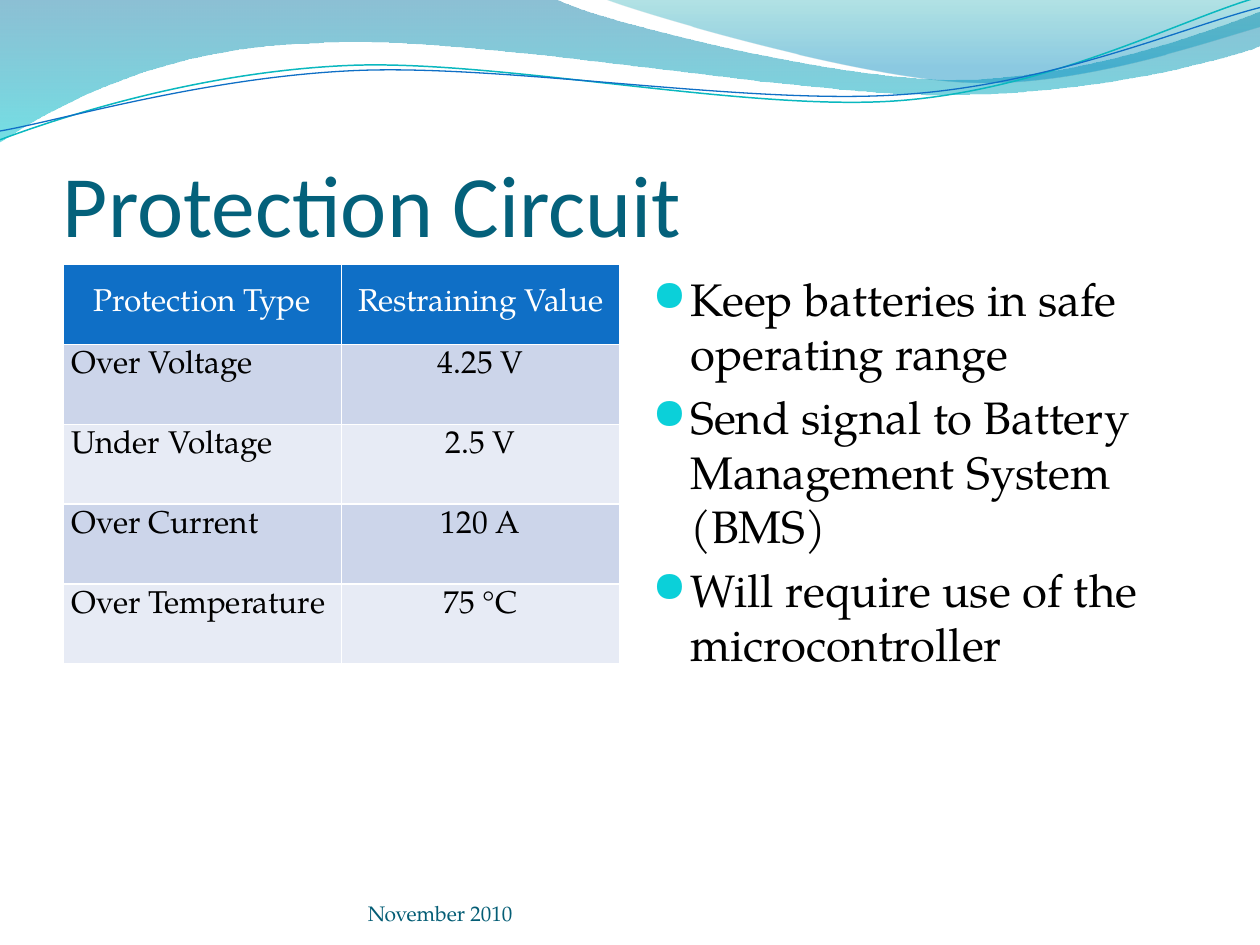
from lxml.etree import SubElement
from pptx import Presentation
from pptx.dml.color import RGBColor
from pptx.enum.text import MSO_ANCHOR, PP_ALIGN
from pptx.oxml.ns import qn
from pptx.util import Inches, Pt

HEADING_FONT = "Calibri"
BODY_FONT = "TeX Gyre Pagella"
BULLET_FONT = "OpenSymbol"
BLUE = "0F6FC6"
WHITE = "FFFFFF"
BLACK = "000000"
BANDS = ("CCD5EA", "E7EBF5")


def color(hex_string):
    return RGBColor.from_string(hex_string)


class SlideBuilder:
    def __init__(self, slide):
        self.slide = slide

    def style(self, paragraph, size, hex_color, font=BODY_FONT, align=PP_ALIGN.LEFT):
        paragraph.font.size = Pt(size)
        paragraph.font.name = font
        paragraph.font.color.rgb = color(hex_color)
        paragraph.alignment = align

    def freeform(self, start, segments, close):
        """Add an outline of lines (x, y) and cubic curves (two controls and an end)."""
        builder = self.slide.shapes.build_freeform(*map(Inches, start))
        builder.add_line_segments(
            [tuple(map(Inches, segment[-2:])) for segment in segments], close=close)
        shape = builder.convert_to_shape()
        shape.shadow.inherit = False
        lines = list(shape._element.spPr.iter(qn("a:lnTo")))
        for line, segment in zip(lines, segments):
            if len(segment) == 2:
                continue
            curve = SubElement(line.getparent(), qn("a:cubicBezTo"))
            for x, y in zip(segment[::2], segment[1::2]):
                SubElement(curve, qn("a:pt"), x=str(Inches(x) - shape.left),
                           y=str(Inches(y) - shape.top))
            line.getparent().replace(line, curve)
        return shape

    def wave(self, start, segments, stops):
        """Add a closed shape with a top-to-bottom gradient of (position, colour, opacity)."""
        shape = self.freeform(start, segments, close=True)
        shape.line.fill.background()
        shape.fill.gradient()
        shape.fill.gradient_angle = 270
        elements = shape._element.spPr.iter(qn("a:gs"))
        for stop, element, (position, hex_color, opacity) in zip(
                shape.fill.gradient_stops, elements, stops):
            stop.color.rgb = color(hex_color)
            stop.position = position / 100
            SubElement(element[0], qn("a:alpha"), val=str(opacity * 1000))

    def wave_line(self, start, segments, hex_color, width):
        shape = self.freeform(start, segments, close=False)
        shape.fill.background()
        shape.line.color.rgb = color(hex_color)
        shape.line.width = Pt(width)

    def text_box(self, box, anchor, margins):
        frame = self.slide.shapes.add_textbox(*map(Inches, box)).text_frame
        frame.word_wrap = True
        frame.vertical_anchor = anchor
        (frame.margin_left, frame.margin_top,
         frame.margin_right, frame.margin_bottom) = map(Inches, margins)
        return frame

    def label(self, text, box, size, hex_color, font=BODY_FONT, top_margin=0):
        frame = self.text_box(box, MSO_ANCHOR.BOTTOM, (0, top_margin, 0, 0))
        frame.text = text
        self.style(frame.paragraphs[0], size, hex_color, font)

    def bullets(self, texts, box, size, bullet_color):
        frame = self.text_box(box, MSO_ANCHOR.TOP, (0.1, 0.05, 0.1, 0.05))
        frame.text = "\n".join(texts)
        for paragraph in frame.paragraphs:
            self.style(paragraph, size, BLACK)
            paragraph.space_before = Pt(size * 0.2)
            properties = paragraph._p.get_or_add_pPr()
            properties.set("marL", str(Inches(0.3)))
            properties.set("indent", str(-Inches(0.3)))
            bullet = SubElement(properties, qn("a:buClr"))
            SubElement(bullet, qn("a:srgbClr"), val=bullet_color)
            SubElement(properties, qn("a:buSzPct"), val="95000")
            SubElement(properties, qn("a:buFont"), typeface=BULLET_FONT)
            SubElement(properties, qn("a:buChar"), char="●")
            # The schema wants the default run properties after the bullet.
            properties.append(properties.find(qn("a:defRPr")))

    def cell_borders(self, cell, hex_color, width):
        properties = cell._tc.get_or_add_tcPr()
        for index, side in enumerate(("lnL", "lnR", "lnT", "lnB")):
            line = SubElement(properties, qn(f"a:{side}"), w=str(Pt(width)))
            fill = SubElement(line, qn("a:solidFill"))
            SubElement(fill, qn("a:srgbClr"), val=hex_color)
            properties.insert(index, line)

    def table(self, rows, box):
        table = self.slide.shapes.add_table(
            len(rows), len(rows[0]), *map(Inches, box)).table
        for row_index, values in enumerate(rows):
            header = row_index == 0
            for column_index, value in enumerate(values):
                cell = table.cell(row_index, column_index)
                cell.text = value
                cell.margin_left = cell.margin_right = Inches(0.07)
                cell.vertical_anchor = MSO_ANCHOR.MIDDLE if header else MSO_ANCHOR.TOP
                centered = header or column_index > 0
                self.style(cell.text_frame.paragraphs[0], 18, WHITE if header else BLACK,
                           align=PP_ALIGN.CENTER if centered else PP_ALIGN.LEFT)
                cell.fill.solid()
                cell.fill.fore_color.rgb = color(BLUE if header else BANDS[(row_index - 1) % 2])
                self.cell_borders(cell, WHITE, 1)


def main():
    presentation = Presentation()
    presentation.slide_width = Inches(10)
    presentation.slide_height = Inches(7.5)
    builder = SlideBuilder(presentation.slides.add_slide(presentation.slide_layouts[6]))

    builder.wave(
        (0, 0),
        [(4.4, -0.01), (4.76, 0.17, 6.64, 0.63, 7.58, 0.63),
         (8.53, 0.63, 9.58, 0.26, 10, 0.09), (10.01, 0.36),
         (9.83, 0.44, 8.7, 0.76, 7.46, 0.75), (6.22, 0.75, 3.82, 0.28, 2.57, 0.34),
         (1.29, 0.36, 0.46, 0.83, -0.01, 1.13)],
        [(0, "0074A1", 45), (100, "00C6CF", 55)])
    builder.wave(
        (4.79, -0.01),
        [(5.09, 0.11, 6.82, 0.62, 7.69, 0.65), (8.56, 0.69, 9.61, 0.32, 10, 0.21), (10, 0)],
        [(0, "00A1A9", 30), (80, "008BBF", 45)])
    builder.wave_line(
        (0, 1.11),
        [(0.48, 0.93, 1.58, 0.57, 2.77, 0.52), (3.95, 0.47, 5.93, 0.89, 7.13, 0.8),
         (8.33, 0.71, 9.38, 0.15, 9.98, -0.02)],
        "0AB8BF", 0.85)
    builder.wave_line(
        (0, 1.04),
        [(0.47, 0.96, 1.64, 0.61, 2.83, 0.56), (4.03, 0.51, 5.97, 0.84, 7.17, 0.75),
         (8.36, 0.67, 9.41, 0.21, 10, 0.06)],
        BLUE, 0.75)

    builder.label("Protection Circuit", (0.5, 0.77, 9, 1.25), 50, "04617B",
                  HEADING_FONT, top_margin=0.05)
    builder.table(
        [("Protection Type", "Restraining Value"),
         ("Over Voltage", "4.25 V"),
         ("Under Voltage", "2.5 V"),
         ("Over Current", "120 A"),
         ("Over Temperature", "75 °C")],
        (0.5, 2.1, 4.42, 3.17))
    builder.bullets(
        ["Keep batteries in safe operating range",
         "Send signal to Battery Management System (BMS)",
         "Will require use of the microcontroller"],
        (5.08, 2.1, 4.42, 4.85), 26, "0BD0D9")
    builder.label("November 2010", (2.92, 6.95, 3.67, 0.4), 12, "045D75")

    presentation.save("out.pptx")


if __name__ == "__main__":
    main()
